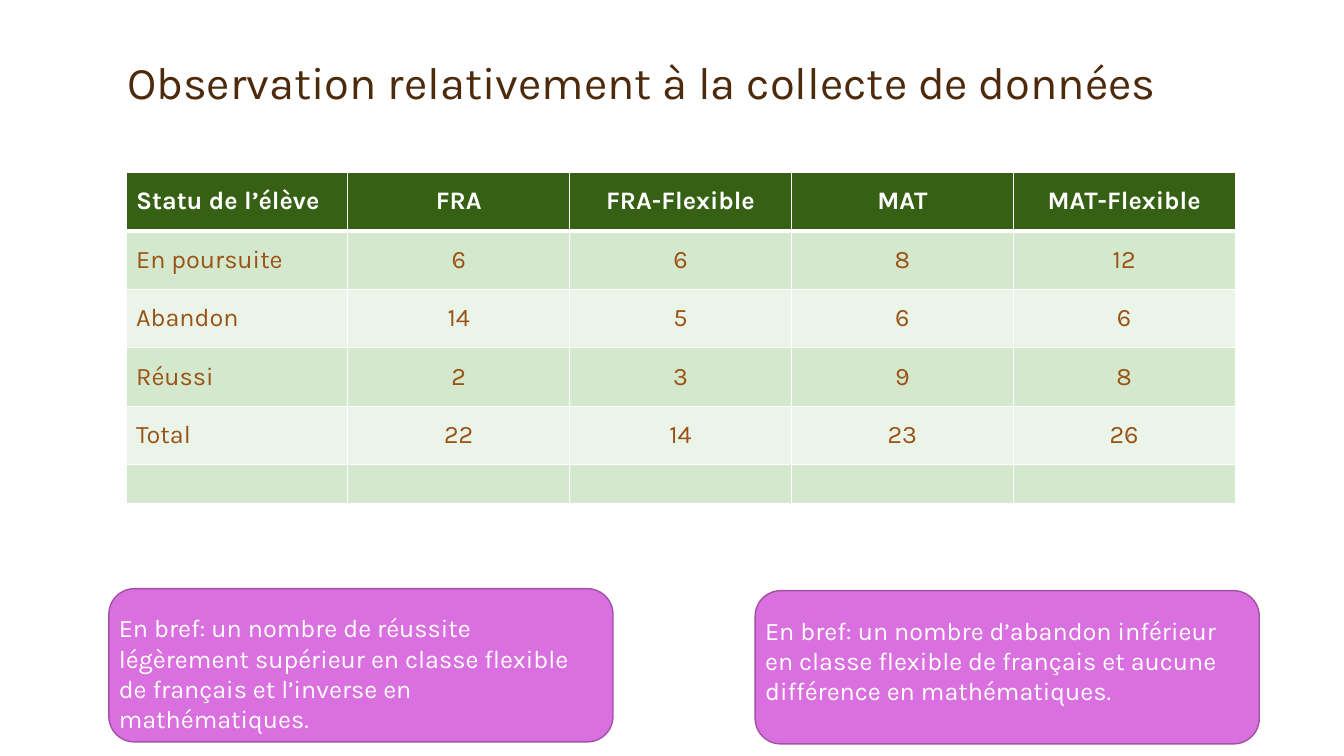
import pptx
import pptx.dml.color
import pptx.enum.shapes
import pptx.enum.text
import pptx.oxml
import pptx.oxml.ns
import pptx.util

Inches = pptx.util.Inches
Pt = pptx.util.Pt
RGBColor = pptx.dml.color.RGBColor
Anchor = pptx.enum.text.MSO_ANCHOR
Align = pptx.enum.text.PP_ALIGN

FONT = "Karla"
WHITE = RGBColor(0xFF, 0xFF, 0xFF)
DARK_BROWN = RGBColor(0x4D, 0x2A, 0x0B)
BROWN = RGBColor(0x9A, 0x53, 0x15)
HEADER_GREEN = RGBColor(0x36, 0x60, 0x13)
BAND_GREEN = RGBColor(0xD4, 0xE8, 0xCD)
PALE_GREEN = RGBColor(0xEB, 0xF4, 0xE8)
PINK = RGBColor(0xDA, 0x6F, 0xDF)
PURPLE = RGBColor(0xA1, 0x52, 0xA5)

RESULTS = [
    ["Statu de l’élève", "FRA", "FRA-Flexible", "MAT", "MAT-Flexible"],
    ["En poursuite", "6", "6", "8", "12"],
    ["Abandon", "14", "5", "6", "6"],
    ["Réussi", "2", "3", "9", "8"],
    ["Total", "22", "14", "23", "26"],
    ["", "", "", "", ""],
]
ROW_HEIGHT, LAST_ROW_HEIGHT = 0.58, 0.39


def add_run(paragraph, wording, size, color, bold=False):
    run = paragraph.add_run()
    run.text = wording
    run.font.name = FONT
    run.font.size = Pt(size)
    run.font.bold = bold
    run.font.color.rgb = color


def add_borders(cell, bottom_width):
    properties = cell._tc.get_or_add_tcPr()
    for side, width in (("L", 1), ("R", 1), ("T", 1), ("B", bottom_width)):
        properties.append(pptx.oxml.parse_xml(
            f'<a:ln{side} {pptx.oxml.ns.nsdecls("a")} w="{Pt(width)}">'
            f'<a:solidFill><a:srgbClr val="{WHITE}"/></a:solidFill></a:ln{side}>'))


def place_title(slide, left, top, width, height):
    title = slide.shapes.title
    title.left, title.top = Inches(left), Inches(top)
    title.width, title.height = Inches(width), Inches(height)
    frame = title.text_frame
    frame.auto_size = pptx.enum.text.MSO_AUTO_SIZE.NONE
    frame.vertical_anchor = Anchor.BOTTOM
    heading = frame.paragraphs[0]
    heading.alignment = Align.LEFT
    heading.line_spacing = 0.9
    add_run(heading, "Observation relativement à la collecte de données", 32.4, DARK_BROWN)


def place_results(slide, left, top, width, height):
    results = slide.shapes.add_table(
        len(RESULTS), len(RESULTS[0]),
        Inches(left), Inches(top), Inches(width), Inches(height)).table
    for column in results.columns:
        column.width = Inches(width / len(RESULTS[0]))
    for r, values in enumerate(RESULTS):
        is_header = r == 0
        is_last = r == len(RESULTS) - 1
        results.rows[r].height = Inches(LAST_ROW_HEIGHT if is_last else ROW_HEIGHT)
        band = HEADER_GREEN if is_header else BAND_GREEN if r % 2 else PALE_GREEN
        for c, value in enumerate(values):
            cell = results.cell(r, c)
            add_borders(cell, 3 if is_header else 1)
            cell.fill.solid()
            cell.fill.fore_color.rgb = band
            cell.vertical_anchor = Anchor.MIDDLE
            if not value:
                # Keeps the empty row at its set height
                cell.margin_top = cell.margin_bottom = 0
                continue
            entry = cell.text_frame.paragraphs[0]
            entry.alignment = Align.CENTER if c else Align.LEFT
            add_run(entry, value, 18, WHITE if is_header else BROWN, is_header)


def place_summary(slide, left, top, width, height, wording):
    # Rounded card
    card = slide.shapes.add_shape(
        pptx.enum.shapes.MSO_SHAPE.ROUNDED_RECTANGLE,
        Inches(left), Inches(top), Inches(width), Inches(height))
    card.shadow.inherit = False
    card.fill.solid()
    card.fill.fore_color.rgb = PINK
    card.line.color.rgb = PURPLE
    card.line.width = Pt(1)
    # Wording over the card
    summary = slide.shapes.add_textbox(
        Inches(left), Inches(top + 0.19), Inches(width - 0.1), Inches(height - 0.21))
    summary.text_frame.word_wrap = True
    add_run(summary.text_frame.paragraphs[0], wording, 18, WHITE)


def build_observation_slide(deck):
    slide = deck.slides.add_slide(deck.slide_layouts[5])
    place_title(slide, 1.16, 0.33, 11.56, 0.8)
    place_results(slide, 1.25, 1.71, 11, 5 * ROW_HEIGHT + LAST_ROW_HEIGHT)
    place_summary(slide, 7.49, 5.86, 5, 1.52,
                  "En bref: un nombre d’abandon inférieur en classe flexible "
                  "de français et aucune différence en mathématiques.")
    place_summary(slide, 1.08, 5.84, 5, 1.52,
                  "En bref: un nombre de réussite légèrement supérieur en classe "
                  "flexible de français et l’inverse en mathématiques.")


def main():
    deck = pptx.Presentation()
    deck.slide_width, deck.slide_height = Inches(13.33), Inches(7.5)
    build_observation_slide(deck)
    deck.save("out.pptx")


if __name__ == "__main__":
    main()
